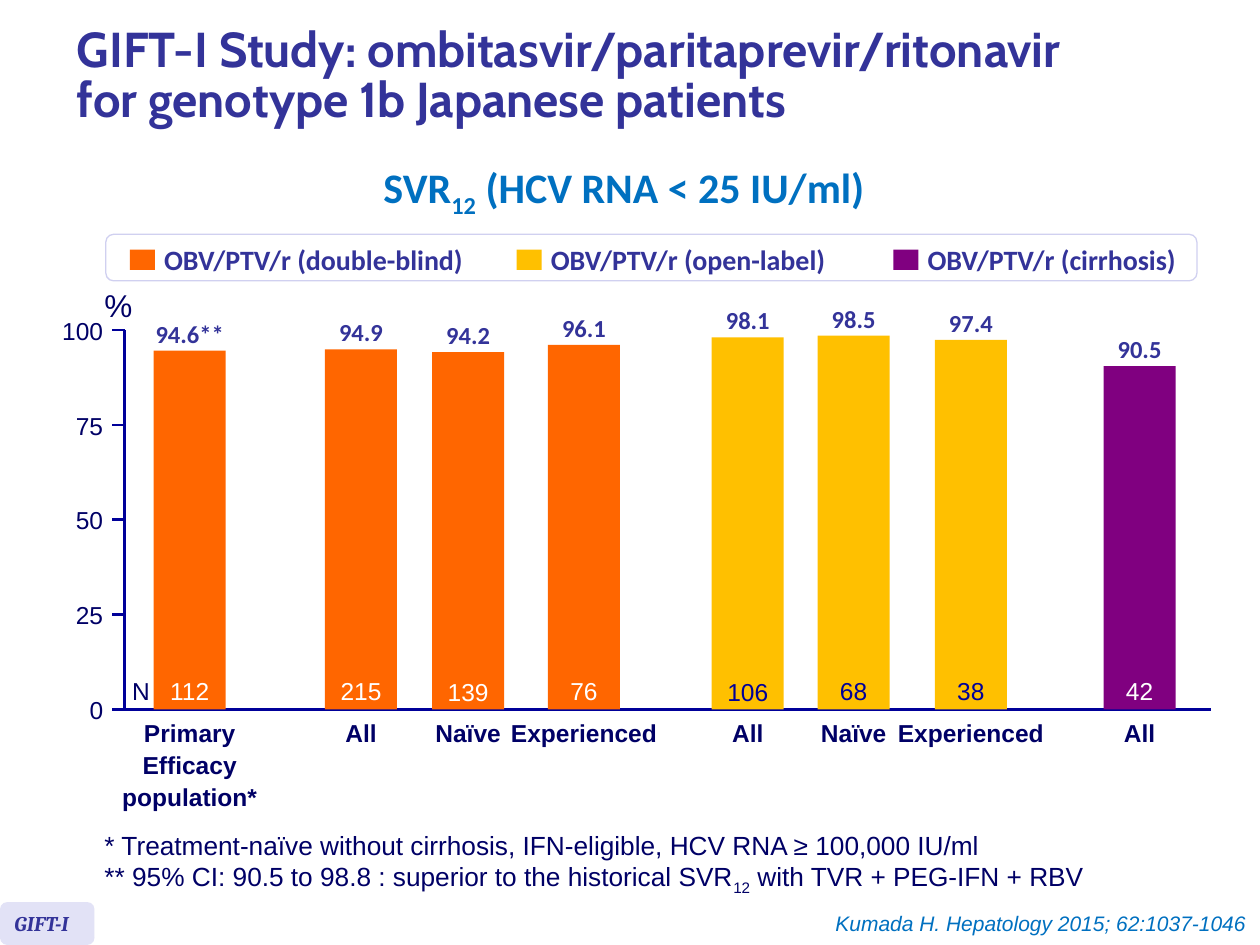
from pptx import Presentation
from pptx.dml.color import RGBColor
from pptx.enum.shapes import MSO_CONNECTOR, MSO_SHAPE
from pptx.enum.text import MSO_ANCHOR, MSO_AUTO_SIZE, PP_ALIGN
from pptx.oxml.ns import qn
from pptx.util import Pt
from lxml import etree

LEFT, MID, RIGHT = PP_ALIGN.LEFT, PP_ALIGN.CENTER, PP_ALIGN.RIGHT
TOP, CENTER, BOTTOM = MSO_ANCHOR.TOP, MSO_ANCHOR.MIDDLE, MSO_ANCHOR.BOTTOM
RECT, ROUND = MSO_SHAPE.RECTANGLE, MSO_SHAPE.ROUNDED_RECTANGLE
STRAIGHT = MSO_CONNECTOR.STRAIGHT

NAVY, BLUE, INDIGO, SKY = "000066", "000099", "333399", "0070C0"
ORANGE, GOLD, PURPLE, WHITE = "FF6600", "FFC000", "800080", "FFFFFF"

TITLE = "GIFT-I Study: ombitasvir/paritaprevir/ritonavir\vfor genotype 1b Japanese patients"
HEAD = "SVR|12| (HCV RNA < 25 IU/ml)"
LEGEND = [
    ("OBV/PTV/r (double-blind)", ORANGE, 74.2),
    ("OBV/PTV/r (open-label)", GOLD, 295.2),
    ("OBV/PTV/r (cirrhosis)", PURPLE, 510.5),
]
BARS = [
    (108.4, 94.6, "**", 112, "Primary\nEfficacy\npopulation*", ORANGE, WHITE),
    (206.3, 94.9, "", 215, "All", ORANGE, WHITE),
    (267.5, 94.2, "", 139, "Naïve", ORANGE, WHITE),
    (333.7, 96.1, "", 76, "Experienced", ORANGE, WHITE),
    (427.3, 98.1, "", 106, "All", GOLD, BLUE),
    (487.8, 98.5, "", 68, "Naïve", GOLD, BLUE),
    (554.8, 97.4, "", 38, "Experienced", GOLD, BLUE),
    (651.2, 90.5, "", 42, "All", PURPLE, WHITE),
]
NOTES = ("* Treatment-naïve without cirrhosis, IFN-eligible, HCV RNA ≥ 100,000 IU/ml\n"
         "** 95% CI: 90.5 to 98.8 : superior to the historical SVR|12| with TVR + PEG-IFN + RBV")
CITE = "Kumada H. Hepatology 2015; 62:1037-1046"

AXIS, BASE, FULL, END = 71.3, 405.4, 216.8, 692
BAR, TICK = 41.2, 7.2


def rgb(code):
    return RGBColor.from_string(code)


def write(shape, text, size, color, face="Arial", align=LEFT, anchor=TOP,
          bold=False, italic=False, pad=(7.2, 3.6), wrap=False, gap=0, lead=None):
    """Fill a shape with styled lines; text between bars is set as subscript."""
    frame = shape.text_frame
    frame.word_wrap = wrap
    frame.auto_size = MSO_AUTO_SIZE.NONE
    frame.vertical_anchor = anchor
    frame.margin_left = frame.margin_right = Pt(pad[0])
    frame.margin_top = frame.margin_bottom = Pt(pad[1])
    for row, line in enumerate(text.split("\n")):
        para = frame.add_paragraph() if row else frame.paragraphs[0]
        if "|" in line:
            for part, words in enumerate(line.split("|")):
                run = para.add_run()
                run.text = words
                if part % 2:
                    run.font._element.set("baseline", "-25000")
        else:
            para.text = line
        para.alignment = align
        if row and gap:
            para.space_before = Pt(gap)
        if lead:
            para.line_spacing = lead
        font = para.font
        font.name, font.size, font.bold, font.italic = face, Pt(size), bold, italic
        font.color.rgb = rgb(color)


def label(slide, x, y, w, h, text, size, color, **style):
    box = slide.shapes.add_textbox(Pt(x), Pt(y), Pt(w), Pt(h))
    write(box, text, size, color, **style)


def block(slide, kind, x, y, w, h, fill, edge=None):
    shape = slide.shapes.add_shape(kind, Pt(x), Pt(y), Pt(w), Pt(h))
    shape.shadow.inherit = False
    shape.fill.solid()
    shape.fill.fore_color.rgb = rgb(fill)
    if edge:
        shape.line.color.rgb = rgb(edge)
        shape.line.width = Pt(0.75)
    else:
        shape.line.fill.background()
    return shape


def rule(slide, x1, y1, x2, y2):
    line = slide.shapes.add_connector(STRAIGHT, Pt(x1), Pt(y1), Pt(x2), Pt(y2))
    line.line.color.rgb = rgb(BLUE)
    line.line.width = Pt(1.5)
    etree.SubElement(line._element.spPr, qn("a:effectLst"))


def legend(slide):
    block(slide, ROUND, 60.5, 133.9, 623.5, 26.6, WHITE, "D0D0F0")
    for text, color, x in LEGEND:
        block(slide, RECT, x, 142.7, 14.4, 11.5, color)
        label(slide, x + 19.6, 133.9, 180, 28.8, text, 16, INDIGO,
              face="Calibri", bold=True, anchor=CENTER, pad=(0, 3.6))


def axes(slide):
    rule(slide, AXIS, BASE - FULL, AXIS, BASE)
    rule(slide, AXIS - TICK, BASE, END, BASE)
    for mark in range(0, 101, 25):
        y = BASE - FULL * mark / 100
        if mark:
            rule(slide, AXIS - TICK, y, AXIS, y)
        label(slide, 29, y - 8.4, 30, 17.2, str(mark), 14, NAVY,
              align=RIGHT, anchor=CENTER, pad=(0, 0))
    label(slide, 52.6, 159.8, 30, 29, "%", 18, NAVY)
    label(slide, 68.4, 383, 24.5, 24.5, "N", 14, NAVY)


def bars(slide):
    for mid, rate, mark, count, group, fill, ink in BARS:
        tall = FULL * rate / 100
        top = BASE - tall
        bar = block(slide, RECT, mid - BAR / 2, top, BAR, tall, fill)
        write(bar, str(count), 14, ink, align=MID, anchor=BOTTOM, pad=(0, 2))
        label(slide, mid - 27, top - 25.4, 54, 31.7, f"{rate}{mark}", 14, INDIGO,
              face="Calibri", bold=True, align=MID, pad=(7.2, 7.2))
        rows = group.count("\n") + 1
        label(slide, mid - 49, 406.8, 98, 7.2 + 17.5 * rows, group, 14, NAVY,
              bold=True, align=MID, gap=1.6)


def main():
    deck = Presentation()
    deck.slide_width, deck.slide_height = Pt(720), Pt(540)
    slide = deck.slides.add_slide(deck.slide_layouts[5])
    title = slide.shapes.title
    title.left, title.top, title.width, title.height = Pt(36.7), Pt(5.8), Pt(657.4), Pt(77)
    write(title, TITLE, 28, INDIGO, face="Cabin", bold=True, anchor=CENTER,
          wrap=True, lead=0.85)
    label(slide, 206.6, 97.9, 300, 31.7, HEAD, 24, SKY, face="Calibri",
          bold=True, align=MID, lead=Pt(23.6))
    legend(slide)
    axes(slide)
    bars(slide)
    label(slide, 52.6, 470.2, 625, 43.9, NOTES, 15, NAVY, wrap=True)
    tag = block(slide, ROUND, 0, 515.5, 54, 24.5, "E2E2F6")
    write(tag, "GIFT-I", 12, INDIGO, face="Cambria", bold=True, italic=True, anchor=CENTER)
    label(slide, 468.7, 517, 250.6, 21.6, CITE, 12, SKY, italic=True, align=RIGHT)
    deck.save("out.pptx")


if __name__ == "__main__":
    main()
